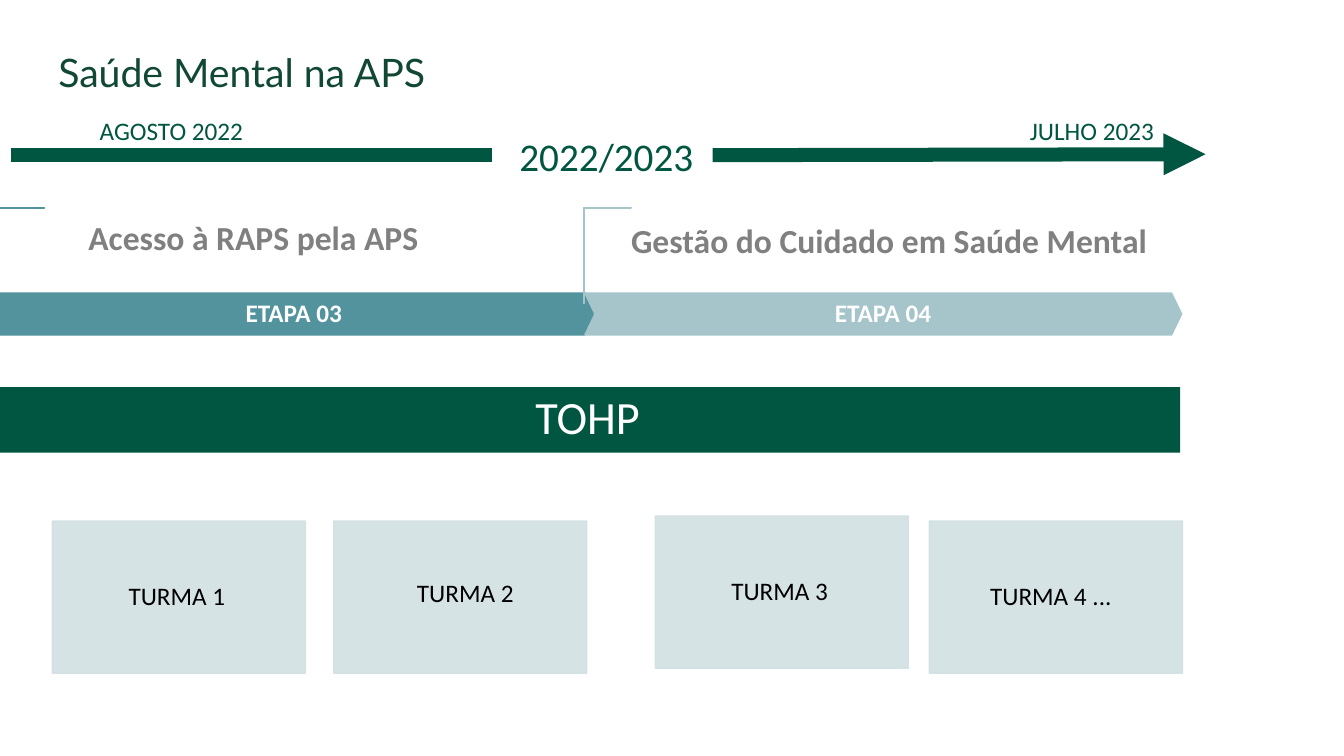
from dataclasses import dataclass

from lxml import etree
from pptx import Presentation
from pptx import util as u
from pptx.dml.color import RGBColor
from pptx.enum import shapes, text
from pptx.oxml.ns import qn


@dataclass(frozen=True)
class Theme:
    title_font: str = "Lato"
    font: str = "Calibri"
    title: str = "114834"
    green: str = "015641"
    teal: str = "52939E"
    light_teal: str = "A5C5CB"
    card: str = "D2E0E3"
    gray: str = "808080"
    white: str = "FFFFFF"
    black: str = "000000"
    small: int = 18
    medium: int = 24
    large: int = 28
    banner: int = 33


T = Theme()
W, H = u.Inches(13.333), u.Inches(7.5)
KIND = shapes.MSO_SHAPE
CENTER, LEFT = text.PP_ALIGN.CENTER, text.PP_ALIGN.LEFT


def place(x, y, w, h):
    """Turn percentages of the slide's width and height into lengths."""
    return [round(v * side / 100) for v, side in zip((x, y, w, h), (W, H, W, H))]


def write(sp, words, size, color, bold=False, align=CENTER, font=T.font):
    p = sp.text_frame.paragraphs[0]
    p.text = words
    p.alignment = align
    p.font.name = font
    p.font.size = u.Pt(size)
    p.font.bold = bold
    p.font.color.rgb = RGBColor.from_string(color)
    return p


def label(s, box, words, size, color, wrap=True, **style):
    sp = s.shapes.add_textbox(*place(*box))
    sp.text_frame.word_wrap = wrap
    write(sp, words, size, color, **style)


def block(s, kind, box, fill, line=None):
    sp = s.shapes.add_shape(kind, *place(*box))
    sp.shadow.inherit = False
    sp.fill.solid()
    sp.fill.fore_color.rgb = RGBColor.from_string(fill)
    if line:
        sp.line.color.rgb = RGBColor.from_string(line)
        sp.line.width = u.Pt(1)
    else:
        sp.line.fill.background()
    return sp


def fill_text(sp, words, size, color, margins=(0, 0, 0, 0), bold=False):
    tf = sp.text_frame
    tf.word_wrap = True
    tf.vertical_anchor = text.MSO_ANCHOR.MIDDLE
    tf.margin_left, tf.margin_top, tf.margin_right, tf.margin_bottom = map(u.Inches, margins)
    write(sp, words, size, color, bold=bold).line_spacing = 0.9


def stage(s, x, kind, color, words):
    """Corner bracket with the stage arrow beneath it."""
    bracket = block(s, KIND.CORNER, (x - 1.8, 30.67, 7.13, 6.27), T.white, color)
    bracket.rotation = 90
    bracket.adjustments[0] = bracket.adjustments[1] = 0.01
    arrow = block(s, kind, (x, 38.67, 44.55, 5.73), color)
    arrow.adjustments[0] = 0.24
    fill_text(arrow, words, T.small, T.white, bold=True)


def timeline(s, x1, y1, x2, y2, arrow=False):
    cn = s.shapes.add_connector(shapes.MSO_CONNECTOR.STRAIGHT, *place(x1, y1, x2, y2))
    cn.line.color.rgb = RGBColor.from_string(T.green)
    cn.line.width = u.Pt(10)
    if arrow:
        etree.SubElement(cn._element.spPr.find(qn("a:ln")), qn("a:tailEnd"), type="triangle")
    etree.SubElement(cn._element.spPr, qn("a:effectLst"))


def card(s, x, y, words, dx=0, dy=0):
    """Class card; dx and dy shift its text in inches through the margins."""
    sp = block(s, KIND.RECTANGLE, (x, y, 18.83, 20.13), T.card, T.card)
    for clr in list(sp._element.spPr.iter(qn("a:srgbClr"))):
        etree.SubElement(clr, qn("a:alpha"), val="90000")
    fill_text(sp, words, T.small, T.black, (0.1 + 2 * dx, 0.1, 0.14, 0.1 - 2 * dy))


def main():
    prs = Presentation()
    prs.slide_width, prs.slide_height = W, H
    s = prs.slides.add_slide(prs.slide_layouts[6])

    # Title
    label(s, (3.6, 5.73, 53.1, 7.6), "Saúde Mental na APS", T.large, T.title,
          align=LEFT, font=T.title_font)

    # Stages
    stage(s, -0.22, KIND.PENTAGON, T.teal, "ETAPA 03")
    stage(s, 43.43, KIND.CHEVRON, T.light_teal, "ETAPA 04")
    for box, words in (
        ((44.7, 28.4, 42.9, 6.67), "Gestão do Cuidado em Saúde Mental"),
        ((-2.63, 28, 42.98, 6.67), "Acesso à RAPS pela APS"),
    ):
        label(s, box, words, T.medium, T.gray, bold=True)

    # Banner
    banner = block(s, KIND.RECTANGLE, (-0.38, 51.2, 88.2, 8.67), T.green)
    fill_text(banner, "TOHP", T.banner, T.white)

    # Timeline
    for x, w, words in ((6.68, 12.45, "AGOSTO 2022"), (75.9, 10.8, "JULHO 2023")):
        label(s, (x, 14.53, w, 5.33), words, T.small, T.green, wrap=False, align=LEFT)
    timeline(s, 53.03, 20.53, 89.7, 20.4, arrow=True)
    label(s, (37.28, 16.8, 15.68, 7.6), "2022/2023", T.large, T.green)
    timeline(s, 0.83, 20.53, 36.6, 20.53)

    # Classes
    card(s, 3.9, 68.93, "TURMA 1")
    card(s, 24.83, 68.93, "TURMA 2", dx=0.07, dy=-0.03)
    card(s, 48.75, 68.27, "TURMA 3")
    card(s, 69.15, 68.93, "TURMA 4 ...", dx=-0.03)

    prs.save("out.pptx")


if __name__ == "__main__":
    main()
